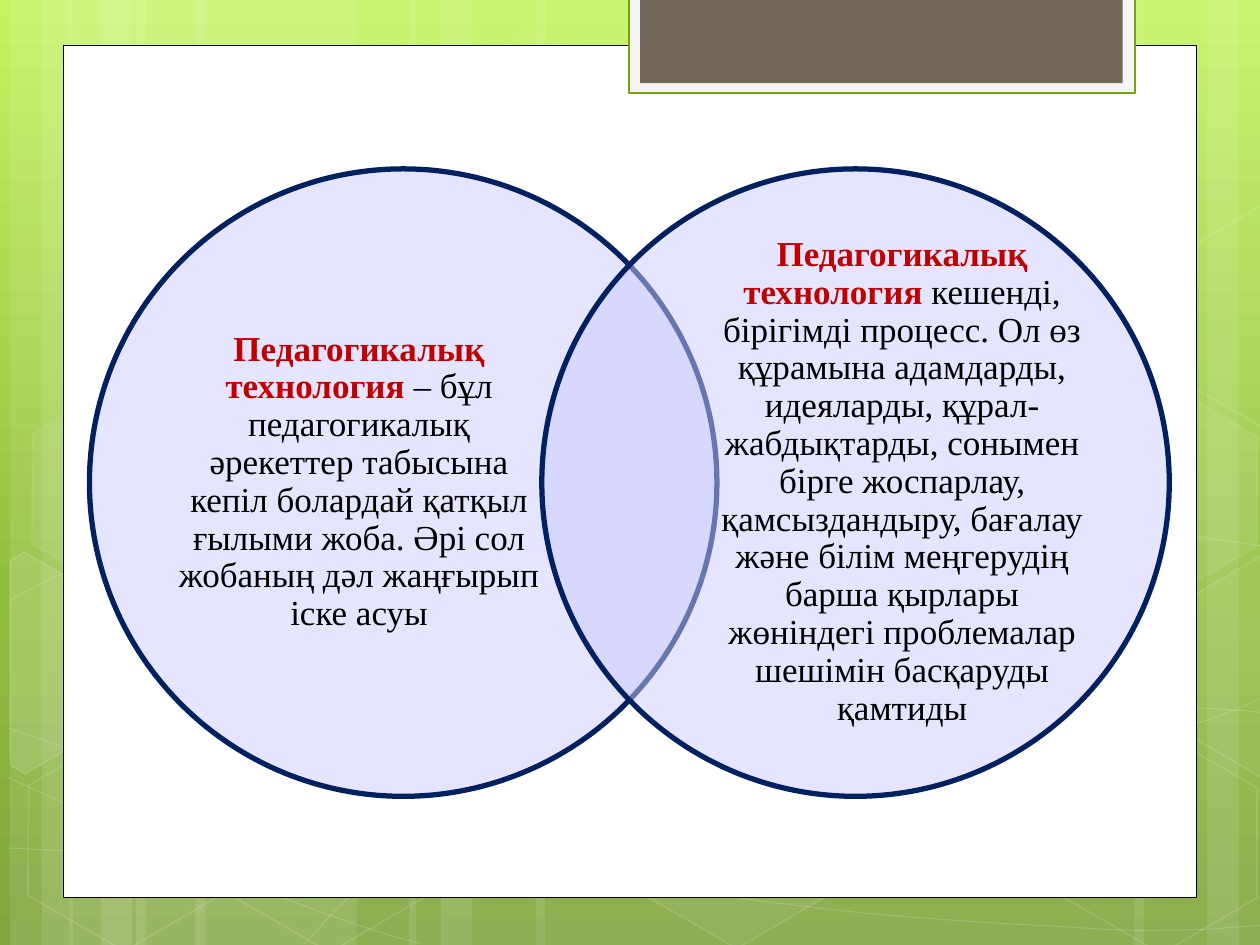
from copy import deepcopy
from math import cos, radians, sin

from lxml.etree import SubElement
from pptx import Presentation
from pptx.dml.color import RGBColor
from pptx.enum.shapes import MSO_SHAPE as Shape
from pptx.enum.text import MSO_ANCHOR as Anchor, PP_ALIGN as Align
from pptx.oxml.ns import qn
from pptx.util import Inches, Pt

WHITE = RGBColor(0xFF, 0xFF, 0xFF)
BLACK = RGBColor(0, 0, 0)
LIME = RGBColor(0xC3, 0xF3, 0x5F)
GREEN = RGBColor(0x93, 0xBF, 0x3F)
OLIVE = RGBColor(0x81, 0xA5, 0x3E)
EDGE = RGBColor(0x74, 0xA5, 0x10)
PALE = RGBColor(0xF5, 0xF5, 0xF5)
TAUPE = RGBColor(0x71, 0x68, 0x5A)
LILAC = RGBColor(0xCC, 0xCC, 0xFF)
NAVY = RGBColor(0x00, 0x20, 0x60)
RED = RGBColor(0xC0, 0, 0)


def paint(shape, fill=None, alpha=100, line=None, width=1, clear=100):
    """Set fill and line; alpha and clear are their opacities in percent."""
    shape.shadow.inherit = False
    for part, color, level, tag in ((shape.fill, fill, alpha, "a:solidFill"),
                                    (shape.line.fill, line, clear, "a:ln/a:solidFill")):
        if color is None:
            part.background()
            continue
        part.solid()
        part.fore_color.rgb = color
        if level < 100:
            steps = [qn(name) for name in tag.split("/")] + [qn("a:srgbClr")]
            node = shape.element.spPr.find("/".join(steps))
            SubElement(node, qn("a:alpha")).set("val", str(level * 1000))
    if line is not None:
        shape.line.width = Pt(width)


def trace(points, close):
    """Draw a freeform through points given in inches."""
    first, *rest = [(Inches(x), Inches(y)) for x, y in points]
    pen = shapes.build_freeform(*first)
    pen.add_line_segments(rest, close=close)
    return pen.convert_to_shape()


prs = Presentation()
prs.slide_width, prs.slide_height = Inches(10), Inches(7.5)
slide = prs.slides.add_slide(prs.slide_layouts[6])
shapes = slide.shapes

# Background gradient
back = slide.background.fill
back.gradient()
back.gradient_angle = 270
stops = slide.element.find(".//" + qn("a:gsLst"))
stops.append(deepcopy(stops[0]))
for stop, spot, color in zip(back.gradient_stops, (0, 0.62, 1), (LIME, GREEN, OLIVE)):
    stop.position = spot
    stop.color.rgb = color

# Translucent vertical bands
for left, width, turn in ((1.08, 1.75, 0), (0.08, 0.5, 0), (0.33, 0.83, 0), (1.55, 1.75, 0),
                          (0.55, 0.5, 0), (0.8, 0.83, 0), (7.33, 1.75, 180),
                          (9.58, 0.5, 180), (9, 0.83, 180), (4.25, 3.08, 0),
                          (3.25, 0.5, 0), (3.5, 0.83, 0)):
    band = shapes.add_shape(Shape.RECTANGLE, Inches(left), 0, Inches(width), Inches(7.5))
    band.rotation = turn
    paint(band, WHITE, 10)

# Thin waves: a start point, then two control points and an end per curve
WAVES = [
    [(0.07, 6.73), (0.61, 6.76), (1.15, 6.79), (1.9, 6.78), (2.65, 6.77), (3.58, 6.75),
     (4.58, 6.65), (5.58, 6.55), (7, 6.36), (7.92, 6.17), (8.83, 5.98), (9.77, 5.68),
     (10.07, 5.51)],
    [(0.07, 4.77), (0.36, 4.61), (0.65, 4.46), (1.21, 4.31), (1.78, 4.16), (2.59, 3.94),
     (3.47, 3.87), (4.36, 3.8), (5.44, 3.79), (6.54, 3.87), (7.64, 3.95), (9.47, 4.26),
     (10.07, 4.34)],
    [(0.06, 6.17), (1.27, 6.72), (2.47, 7.27), (3.34, 7.49)],
    [(0.07, 5.78), (0.38, 5.89), (0.7, 6), (1.28, 6.16), (1.86, 6.31), (2.73, 6.56),
     (3.57, 6.73), (4.4, 6.9), (5.45, 7.08), (6.28, 7.18), (7.11, 7.29), (8, 7.33),
     (8.53, 7.36), (9.05, 7.4), (9.19, 7.38), (9.45, 7.38), (9.71, 7.37), (9.89, 7.35),
     (10.07, 7.34)],
    [(2.42, 7.49), (2.6, 7.29), (2.78, 7.09), (3.02, 6.91), (3.26, 6.73), (3.6, 6.53),
     (3.88, 6.39), (4.16, 6.25), (4.33, 6.19), (4.7, 6.09), (5.06, 5.99), (5.73, 5.85),
     (6.08, 5.78), (6.44, 5.71), (6.49, 5.71), (6.8, 5.69), (7.11, 5.66), (7.6, 5.63),
     (7.94, 5.62), (8.29, 5.61), (8.86, 5.62), (8.86, 5.62), (9.08, 5.62), (9.31, 5.62),
     (9.53, 5.62), (9.71, 5.63), (9.88, 5.64), (9.97, 5.65), (10.06, 5.66),
     (10.03, 5.65), (10.06, 5.66)],
]
for points in WAVES:
    wave = trace(points, False)
    route = wave.element.find(".//" + qn("a:path"))
    lines = route.findall(qn("a:lnTo"))
    for i in range(0, len(lines), 3):
        curve = SubElement(route, qn("a:cubicBezTo"))
        for line in lines[i:i + 3]:
            curve.append(line[0])
            route.remove(line)
    paint(wave, line=WHITE, width=0.5, clear=20)

# Hexagons: left, top, fill opacity, line opacity
TILT = 30
for left, top, alpha, clear in ((3.34, 0.36, 4, 8), (4.97, 5.89, 6, 12),
                                (0.11, 5.91, 0, 12), (0.14, 3.12, 7, 8),
                                (1.74, 5.92, 0, 12), (7.53, 4.53, 10, 12),
                                (8.34, 5.93, 0, 12), (8.34, 3.14, 7, 8)):
    cell = shapes.add_shape(Shape.HEXAGON, Inches(left), Inches(top), Inches(1.75), Inches(1.52))
    cell.adjustments[0] = 0.285
    cell.rotation = TILT
    paint(cell, WHITE if alpha else None, alpha, WHITE, 1, clear)

# Hexagons cut by the slide edge: fill opacity, centre, corners as seen after the tilt
c, s = cos(radians(TILT)), sin(radians(TILT))
for alpha, mx, my, points in (
        (10, 0.36, 5.35, [(0.08, 4.45), (0.19, 4.38), (0.96, 4.82), (0.95, 5.7),
                          (0.2, 6.14), (0.08, 6.07)]),
        (4, 9.85, 5.2, [(9.26, 4.85), (10.01, 4.41), (10.09, 4.46), (10.09, 6.13),
                        (10.02, 6.17), (9.26, 5.73)]),
        (0, 9.85, 2.41, [(9.26, 2.07), (10.01, 1.63), (10.1, 1.68), (10.09, 3.35),
                         (10.02, 3.39), (9.26, 2.95)])):
    flat = [(mx + (x - mx) * c + (y - my) * s, my - (x - mx) * s + (y - my) * c)
            for x, y in points]
    cut = trace(flat, True)
    cut.rotation = TILT
    paint(cut, WHITE if alpha else None, alpha, WHITE, 1, 12)

# White page and top tab
for box, fill, line, width in (((0.5, 0.36, 9, 6.76), WHITE, BLACK, 0.5),
                               ((4.99, -0.02, 4.02, 0.76), PALE, EDGE, 1.25),
                               ((5.08, -0.02, 3.83, 0.68), TAUPE, None, 0)):
    panel = shapes.add_shape(Shape.RECTANGLE, *map(Inches, box))
    paint(panel, fill, line=line, width=width)

# Overlapping circles with their texts
TERM = "Педагогикалық технология "
for left, start, text in (
        (0.71, 1.41, "– бұл педагогикалық əрекеттер табысына кепіл болардай қатқыл ғылыми "
                     "жоба. Əрі сол жобаның дəл жаңғырып іске асуы"),
        (4.3, 5.72, "кешенді, бірігімді процесс. Ол өз құрамына адамдарды, идеяларды, "
                    "құрал-жабдықтарды, сонымен бірге жоспарлау, қамсыздандыру, бағалау "
                    "жəне білім меңгерудің барша қырлары жөніндегі проблемалар шешімін "
                    "басқаруды қамтиды")):
    disc = shapes.add_shape(Shape.OVAL, Inches(left), Inches(1.34), Inches(4.98), Inches(4.98))
    paint(disc, LILAC, 50, NAVY, 3)
    frame = shapes.add_textbox(Inches(start), Inches(1.92), Inches(2.88), Inches(3.81)).text_frame
    frame.word_wrap = True
    frame.vertical_anchor = Anchor.MIDDLE
    frame.margin_left = frame.margin_right = frame.margin_top = frame.margin_bottom = 0
    para = frame.paragraphs[0]
    para.alignment = Align.CENTER
    para.line_spacing = 0.9
    for words, color, bold in ((TERM, RED, True), (text, BLACK, False)):
        run = para.add_run()
        run.text = words
        run.font.name = "Times New Roman"
        run.font.size = Pt(20)
        run.font.bold = bold
        run.font.color.rgb = color

prs.save("out.pptx")
